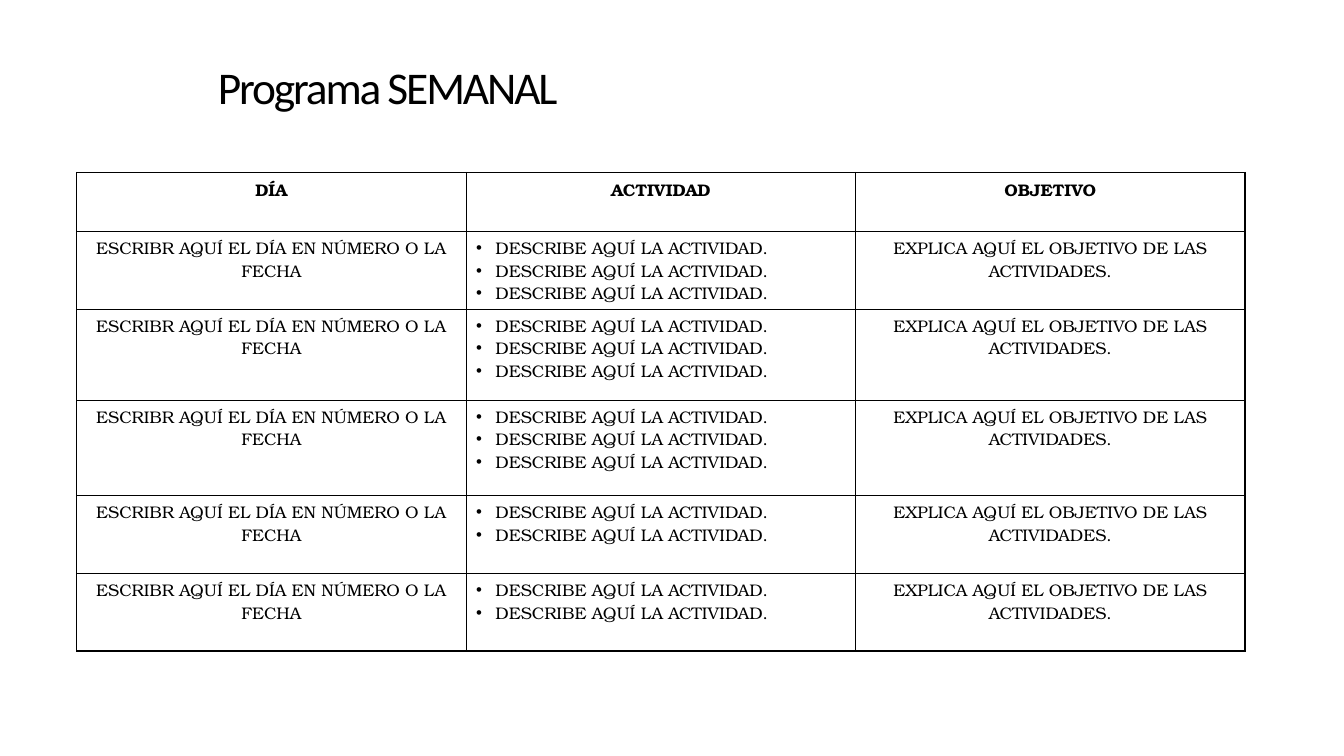
from lxml.etree import SubElement
from pptx import Presentation
from pptx.dml.color import RGBColor
from pptx.enum.text import MSO_ANCHOR, MSO_AUTO_SIZE, PP_ALIGN
from pptx.oxml.ns import qn
from pptx.util import Inches, Pt

BLACK = "000000"
HEADERS = ["DÍA", "ACTIVIDAD", "OBJETIVO"]
DAY = "ESCRIBR AQUÍ EL DÍA EN NÚMERO O LA FECHA"
ACTIVITY = "DESCRIBE AQUÍ LA ACTIVIDAD."
GOAL = "EXPLICA AQUÍ EL OBJETIVO DE LAS ACTIVIDADES."
ACTIVITY_COUNTS = [3, 3, 3, 2, 2]
ROW_HEIGHTS = [0.59, 0.77, 0.9, 0.95, 0.77, 0.77]


def color(value):
    """Turn a hex string into a colour."""
    return RGBColor.from_string(value)


def set_all(obj, values):
    """Set each attribute of obj from a dict."""
    for name, value in values.items():
        setattr(obj, name, value)


def format_run(r, font, size, bold=False):
    """Give a run its font, size, weight and colour."""
    set_all(r.font, {"name": font, "size": Pt(size), "bold": bold})
    r.font.color.rgb = color(BLACK)


def add_bullet(p):
    """Give a paragraph a hanging round bullet."""
    pPr = p._p.get_or_add_pPr()
    pPr.set("marL", str(Inches(0.19)))
    pPr.set("indent", str(-Inches(0.19)))
    SubElement(pPr, qn("a:buFont"), typeface="Arial")
    SubElement(pPr, qn("a:buChar"), char="•")


def add_borders(cell):
    """Draw a thin line on all four sides of a cell."""
    tcPr = cell._tc.get_or_add_tcPr()
    for side in ("a:lnL", "a:lnR", "a:lnT", "a:lnB"):
        ln = SubElement(tcPr, qn(side), w=str(Pt(1)))
        fill = SubElement(ln, qn("a:solidFill"))
        SubElement(fill, qn("a:srgbClr"), val=BLACK)


def fill_cell(cell, lines, bold=False, bullets=False):
    """Write the lines of a cell, centred or bulleted."""
    add_borders(cell)
    cell.fill.background()
    tf = cell.text_frame
    tf.text = "\n".join(lines)
    for p in tf.paragraphs:
        p.alignment = PP_ALIGN.LEFT if bullets else PP_ALIGN.CENTER
        if bullets:
            add_bullet(p)
        format_run(p.runs[0], "TeX Gyre Bonum", 12, bold)


def add_title(s, left, top, width, height):
    """Place the slide title in the given box."""
    sp = s.shapes.title
    set_all(sp, {"left": Inches(left), "top": Inches(top),
                 "width": Inches(width), "height": Inches(height)})
    tf = sp.text_frame
    tf.text = "Programa SEMANAL"
    inset = Inches(0.25)
    set_all(tf, {"margin_left": inset, "margin_right": inset,
                 "margin_top": inset, "margin_bottom": inset,
                 "word_wrap": True, "auto_size": MSO_AUTO_SIZE.NONE,
                 "vertical_anchor": MSO_ANCHOR.MIDDLE})
    p = tf.paragraphs[0]
    set_all(p, {"alignment": PP_ALIGN.CENTER, "line_spacing": 0.85})
    r = p.runs[0]
    format_run(r, "Calibri", 32.4)
    r.font._element.set("spc", "-150")


def add_schedule(s, left, top, width):
    """Place the weekly table, with equal columns, in the given box."""
    table = s.shapes.add_table(
        len(ROW_HEIGHTS), len(HEADERS), Inches(left), Inches(top),
        Inches(width), Inches(sum(ROW_HEIGHTS))).table
    set_all(table, {"first_row": False, "horz_banding": False})
    for row, height in zip(table.rows, ROW_HEIGHTS):
        row.height = Inches(height)
    for col, header in enumerate(HEADERS):
        fill_cell(table.cell(0, col), [header], bold=True)
    for row, count in enumerate(ACTIVITY_COUNTS, 1):
        fill_cell(table.cell(row, 0), [DAY])
        fill_cell(table.cell(row, 1), [ACTIVITY] * count, bullets=True)
        fill_cell(table.cell(row, 2), [GOAL])


def main():
    """Build the weekly programme slide."""
    prs = Presentation()
    set_all(prs, {"slide_width": Inches(13.33), "slide_height": Inches(7.5)})
    s = prs.slides.add_slide(prs.slide_layouts[5])
    add_title(s, 0, 0.5, 7.69, 0.8)
    add_schedule(s, 0.76, 1.71, 11.59)
    prs.save("out.pptx")


if __name__ == "__main__":
    main()
